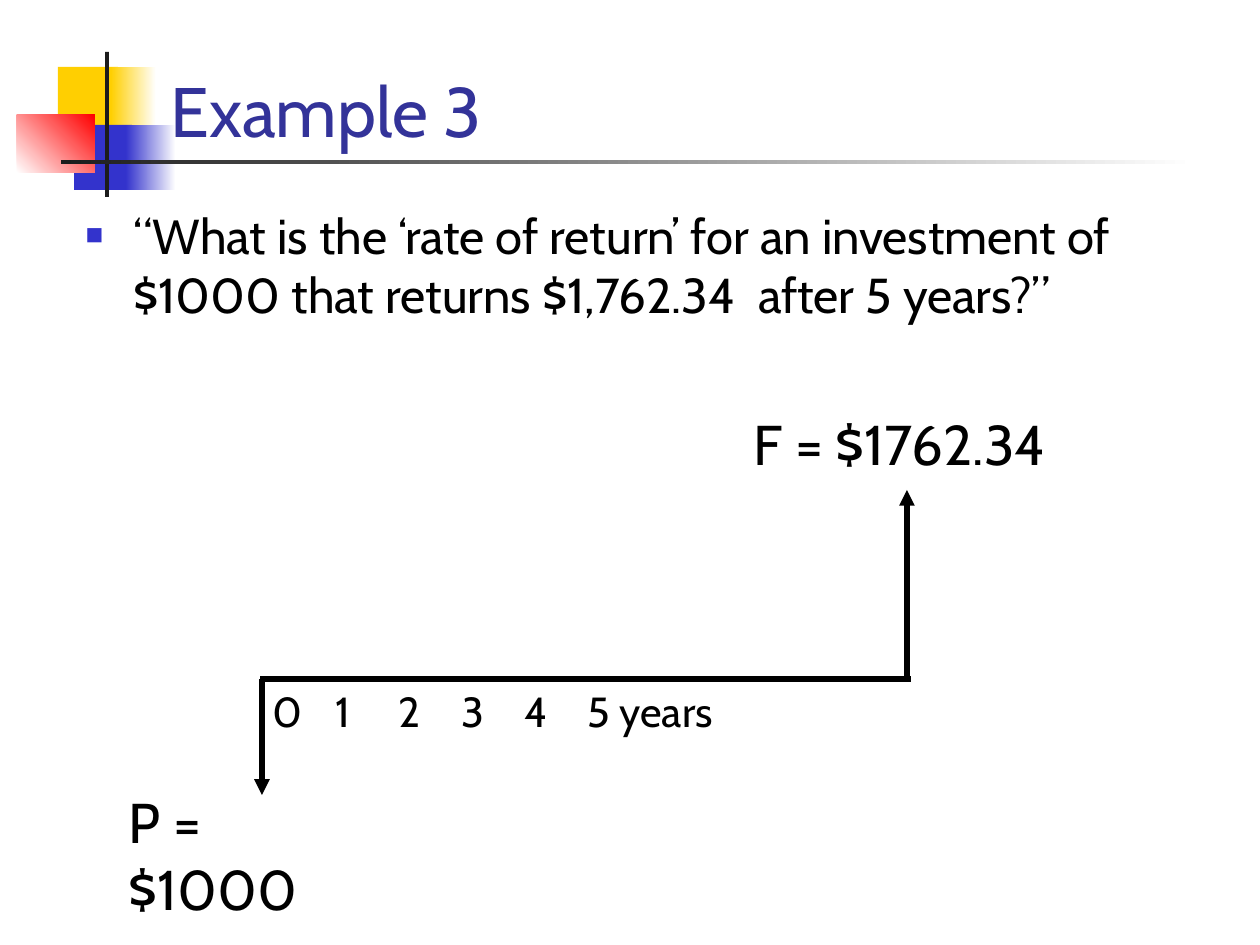
from lxml import etree
from pptx import Presentation
from pptx.dml.color import RGBColor
from pptx.enum import shapes, text
from pptx.oxml import ns
from pptx.util import Pt

PX = 914400 / 126
FONT = "Cabin"
YELLOW = RGBColor(0xFF, 0xCF, 0x01)
BLUE = RGBColor(0x33, 0x33, 0xCC)
RED = RGBColor(0xFF, 0x00, 0x00)
WHITE = RGBColor(0xFF, 0xFF, 0xFF)
DARK = RGBColor(0x1C, 0x1C, 0x1C)
NAVY = RGBColor(0x33, 0x33, 0x99)
BLACK = RGBColor(0x00, 0x00, 0x00)

# Content: boxes are (left, top, width, height) in px
TITLE = ("Example 3", (158, 32, 798, 126))
QUESTION = ("“What is the ‘rate of return’ for an investment of $1000 "
            "that returns $1,762.34  after 5 years?”", (73, 199, 1124, 126))

# Box, colours (one is solid, two a gradient), gradient angle
ORNAMENTS = [
    ((58, 67, 60, 65), [YELLOW], 0),
    ((111, 67, 45, 65), [YELLOW, WHITE], 0),
    ((74, 125, 58, 65), [BLUE], 0),
    ((126, 125, 50, 65), [BLUE, WHITE], 0),
    ((17, 115, 78, 58), [WHITE, RED], 45),
    ((105, 52, 4, 145), [DARK], 0),
    ((61, 160, 1134, 4), [DARK, WHITE], 0),
]

# Cash flow diagram
START, END, AXIS = 262, 907, 679
FLOWS = [
    ((END + 4, AXIS), (START - 2, AXIS), False),
    ((END, AXIS), (END, 490), True),
    ((START, AXIS), (START, 795), True),
]
YEARS = "\t".join(str(year) for year in range(6)) + " years"
LABELS = [
    ("P = $1000", (116, 781, 256, 80), 32),
    ("F = $1762.34", (741, 403, 326, 80), 32),
    (YEARS, (260, AXIS, 775, 63), 24),
]


def emu(*lengths):
    return [round(length * PX) for length in lengths]


def add_child(parent, tag, **attributes):
    return etree.SubElement(parent, ns.qn(tag), attributes)


def write(box, words, size, color, anchor=text.MSO_ANCHOR.TOP):
    frame = box.text_frame
    frame.text = words
    frame_format = {"word_wrap": True, "vertical_anchor": anchor,
                    "auto_size": text.MSO_AUTO_SIZE.NONE}
    for name, value in frame_format.items():
        setattr(frame, name, value)
    para = frame.paragraphs[0]
    para.alignment = text.PP_ALIGN.LEFT
    span = para.runs[0]
    for name, value in {"name": FONT, "size": Pt(size)}.items():
        setattr(span.font, name, value)
    span.font.color.rgb = color
    return para


def place(holder, bounds):
    for name, value in zip(("left", "top", "width", "height"), emu(*bounds)):
        setattr(holder, name, value)
    # Bring in front of the ornaments
    holder.element.getparent().append(holder.element)


def add_ornament(page, bounds, colors, angle):
    shape = page.shapes.add_shape(shapes.MSO_SHAPE.RECTANGLE, *emu(*bounds))
    shape.shadow.inherit = False
    shape.line.fill.background()
    if len(colors) == 1:
        shape.fill.solid()
        shape.fill.fore_color.rgb = colors[0]
        return
    shape.fill.gradient()
    shape.fill.gradient_angle = angle
    for stop, position, color in zip(shape.fill.gradient_stops, (0, 1), colors):
        stop.position = position
        stop.color.rgb = color


def add_flow(page, start, end, arrow):
    line = page.shapes.add_connector(shapes.MSO_CONNECTOR.STRAIGHT,
                                     *emu(*start, *end))
    line.line.width = Pt(3)
    line.line.color.rgb = BLACK
    if arrow:
        add_child(line.line._get_or_add_ln(), "a:tailEnd", type="triangle")
    add_child(line.element.spPr, "a:effectLst")


def add_bullet(para):
    para.space_before = Pt(5.6)
    props = para._p.get_or_add_pPr()
    for name, value in {"marL": 0.38, "indent": -0.38}.items():
        props.set(name, str(round(value * 914400)))
    color = add_child(props, "a:buClr")
    add_child(color, "a:srgbClr", val=str(BLUE))
    add_child(props, "a:buSzPct", val="60000")
    add_child(props, "a:buChar", char="■")


def main():
    deck = Presentation()
    deck.slide_width, deck.slide_height = emu(1260, 945)
    page = deck.slides.add_slide(deck.slide_layouts[1])

    # Ornaments behind the title
    for ornament in ORNAMENTS:
        add_ornament(page, *ornament)

    # Title and question
    title, body = page.placeholders
    words, bounds = TITLE
    place(title, bounds)
    write(title, words, 40, NAVY, text.MSO_ANCHOR.BOTTOM)
    words, bounds = QUESTION
    place(body, bounds)
    add_bullet(write(body, words, 28, BLACK))

    # Cash flow diagram
    for flow in FLOWS:
        add_flow(page, *flow)
    for words, bounds, size in LABELS:
        write(page.shapes.add_textbox(*emu(*bounds)), words, size, BLACK)

    deck.save("out.pptx")


if __name__ == "__main__":
    main()
